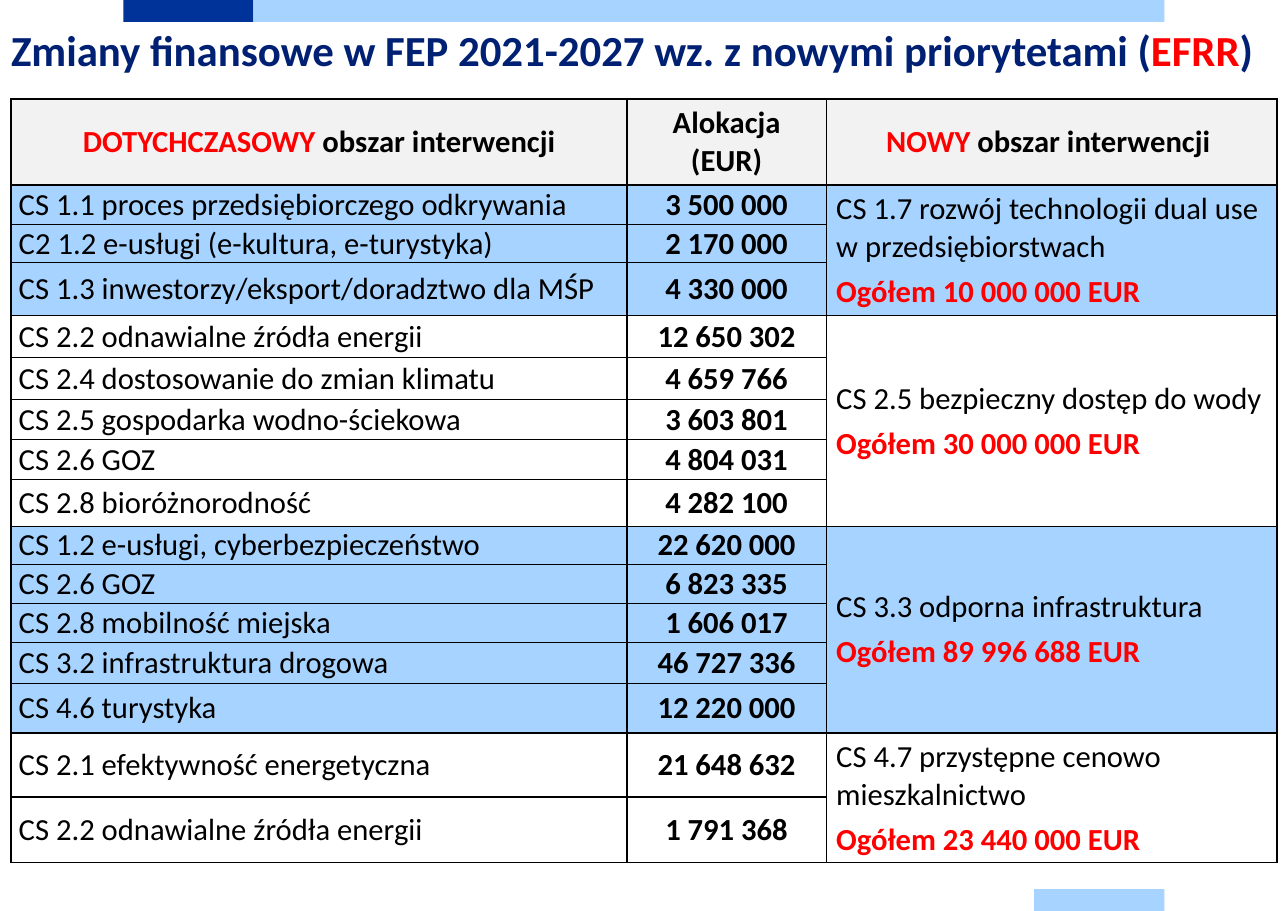
import pptx
import pptx.util
import pptx.dml.color
import pptx.enum.shapes
import pptx.enum.text
import pptx.oxml
import pptx.oxml.ns

deck = pptx.Presentation()
deck.slide_width = pptx.util.Inches(11.69)
deck.slide_height = pptx.util.Inches(8.27)
page = deck.slides.add_slide(deck.slide_layouts[6])
across = deck.slide_width / 100
down = deck.slide_height / 100

NAVY, BLUE, SKY = "002073", "003399", "A6D3FF"
RED, BLACK, GREY, WHITE = "FF0000", "000000", "F2F2F2", "FFFFFF"
CENTER = pptx.enum.text.PP_ALIGN.CENTER
LEFT = pptx.enum.text.PP_ALIGN.LEFT
MIDDLE = pptx.enum.text.MSO_ANCHOR.MIDDLE


def color(code):
    return pptx.dml.color.RGBColor.from_string(code)


def write(para, spans, size, formats):
    for name, value in formats.items():
        setattr(para, name, value)
    for text, code, bold in spans:
        span = para.add_run()
        span.text = text
        for name, value in {"name": "Calibri", "size": pptx.util.Pt(size), "bold": bold}.items():
            setattr(span.font, name, value)
        span.font.color.rgb = color(code)


bars = [(9.58, 0, 10.1, BLUE), (19.68, 0, 70.72, SKY), (80.3, 97.6, 10.1, SKY)]
for left, top, width, code in bars:
    bar = page.shapes.add_shape(
        pptx.enum.shapes.MSO_SHAPE.RECTANGLE,
        int(left * across), int(top * down), int(width * across), int(2.4 * down))
    bar.shadow.inherit = False
    bar.fill.solid()
    bar.fill.fore_color.rgb = color(code)
    bar.line.fill.background()

title = page.shapes.add_textbox(
    int(0.86 * across), int(2.06 * down), int(98.12 * across), int(6.77 * down))
frame_formats = {"word_wrap": True, "vertical_anchor": MIDDLE, "margin_left": 0,
                 "margin_right": 0, "margin_top": 0, "margin_bottom": 0}
for name, value in frame_formats.items():
    setattr(title.text_frame, name, value)
write(title.text_frame.paragraphs[0],
      [("Zmiany finansowe w FEP 2021-2027 wz. z nowymi priorytetami (", NAVY, True),
       ("EFRR", RED, True), (")", NAVY, True)],
      28, {"line_spacing": pptx.util.Pt(33.9)})

headings = [
    [("DOTYCHCZASOWY", RED, True), (" obszar interwencji", BLACK, True)],
    [("Alokacja (EUR)", BLACK, True)],
    [("NOWY", RED, True), (" obszar interwencji ", BLACK, True)],
]
groups = [
    (SKY, "CS 1.7 rozwój technologii dual use w przedsiębiorstwach", "Ogółem 10 000 000 EUR", [
        ("CS 1.1 proces przedsiębiorczego odkrywania", "3 500 000", 4.35),
        ("C2 1.2 e-usługi (e-kultura, e-turystyka)", "2 170 000", 4.2),
        ("CS 1.3 inwestorzy/eksport/doradztwo dla MŚP", "4 330 000", 5.8)]),
    (WHITE, "CS 2.5 bezpieczny dostęp do wody", "Ogółem 30 000 000 EUR", [
        ("CS 2.2 odnawialne źródła energii", "12 650 302", 4.61),
        ("CS 2.4 dostosowanie do zmian klimatu", "4 659 766", 4.61),
        ("CS 2.5 gospodarka wodno-ściekowa", "3 603 801", 4.39),
        ("CS 2.6 GOZ", "4 804 031", 4.39),
        ("CS 2.8 bioróżnorodność", "4 282 100", 5.16)]),
    (SKY, "CS 3.3 odporna infrastruktura", "Ogółem 89 996 688 EUR", [
        ("CS 1.2 e-usługi, cyberbezpieczeństwo", "22 620 000", 4.17),
        ("CS 2.6 GOZ", "6 823 335", 4.28),
        ("CS 2.8 mobilność miejska", "1 606 017", 4.28),
        ("CS 3.2 infrastruktura drogowa", "46 727 336", 4.5),
        ("CS 4.6 turystyka", "12 220 000", 5.43)]),
    (WHITE, "CS 4.7 przystępne cenowo mieszkalnictwo", "Ogółem 23 440 000 EUR", [
        ("CS 2.1 efektywność energetyczna", "21 648 632", 7.03),
        ("CS 2.2 odnawialne źródła energii", "1 791 368", 7.19)]),
]

heights = [9.43] + [height for group in groups for _, _, height in group[3]]
table = page.shapes.add_table(
    len(heights), 3, int(0.86 * across), int(10.88 * down),
    int(98.29 * across), int(sum(heights) * down)).table
for column, width in zip(table.columns, [47.82, 15.48, 34.99]):
    column.width = int(width * across)
for row, height in zip(table.rows, heights):
    row.height = int(height * down)

contents = {(0, column): (GREY, CENTER, [spans]) for column, spans in enumerate(headings)}
first = 1
for fill, area, total, sources in groups:
    last = first + len(sources) - 1
    table.cell(first, 2).merge(table.cell(last, 2))
    contents[first, 2] = (fill, LEFT, [[(area, BLACK, False)], [(total, RED, True)]])
    for index, (source, amount, _) in enumerate(sources, first):
        contents[index, 0] = (fill, LEFT, [[(source, BLACK, False)]])
        contents[index, 1] = (fill, CENTER, [[(amount, BLACK, True)]])
        if index > first:
            contents[index, 2] = (fill, LEFT, [])
    first = last + 1

for (row, column), (fill, alignment, lines) in contents.items():
    cell = table.cell(row, column)
    roomy = row == 0 or column == 2
    side = pptx.util.Inches(0.09 if roomy else 0.07)
    edge = pptx.util.Inches(0.05 if roomy else 0)
    cell_formats = {"vertical_anchor": MIDDLE, "margin_left": side, "margin_right": side,
                    "margin_top": edge, "margin_bottom": edge}
    for name, value in cell_formats.items():
        setattr(cell, name, value)
    for index, spans in enumerate(lines):
        para = cell.text_frame.add_paragraph() if index else cell.text_frame.paragraphs[0]
        write(para, spans, 20, {"alignment": alignment, "space_after": pptx.util.Pt(5)})
    properties = cell._tc.get_or_add_tcPr()
    for border in ("lnL", "lnR", "lnT", "lnB"):
        properties.append(pptx.oxml.parse_xml(
            f'<a:{border} {pptx.oxml.ns.nsdecls("a")} w="12700"><a:solidFill>'
            f'<a:srgbClr val="{BLACK}"/></a:solidFill></a:{border}>'))
    cell.fill.solid()
    cell.fill.fore_color.rgb = color(fill)

deck.save("out.pptx")
